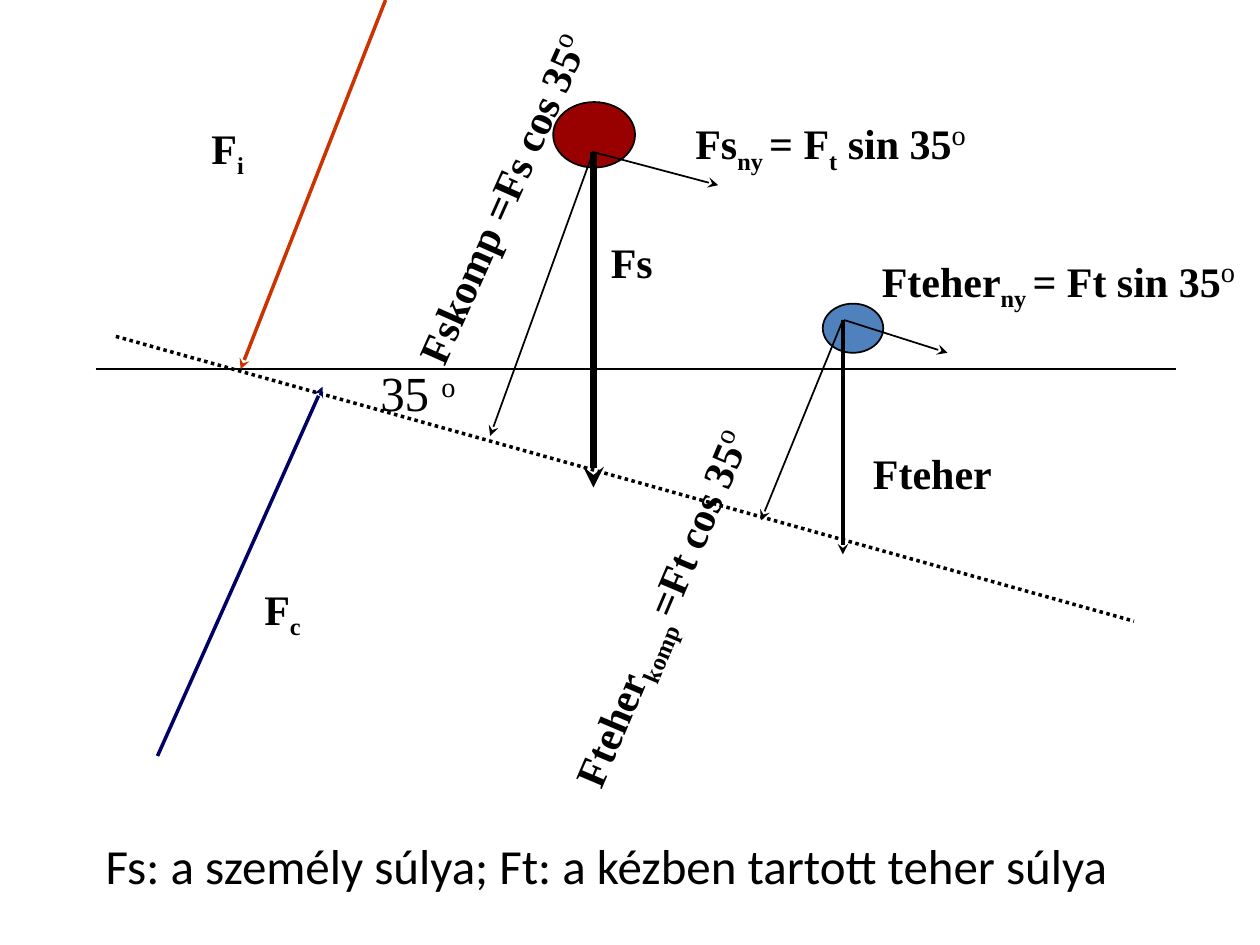
from lxml.etree import SubElement
from pptx import Presentation
from pptx.dml.color import RGBColor
from pptx.enum.dml import MSO_LINE
from pptx.enum.shapes import MSO_CONNECTOR, MSO_SHAPE
from pptx.oxml.ns import qn
from pptx.util import Inches, Pt

BLACK = "000000"

# start, tip, colour, width in points, ending
LEVEL = ((0.76, 2.93), (9.33, 2.93), BLACK, 1, "plain")
PERSON_WEIGHT = ((4.71, 1.21), (4.71, 3.87), BLACK, 4, "arrow")
LOAD_WEIGHT = ((6.69, 2.54), (6.69, 4.4), BLACK, 2, "arrow")
SPINE_AND_FORCES = [
    ((0.92, 2.67), (9, 4.93), BLACK, 2, "dotted"),
    ((3.06, 0), (1.91, 2.93), "CC3300", 2, "arrow"),
    ((4.71, 1.2), (3.89, 3.46), BLACK, 1, "arrow"),
    ((6.69, 2.54), (6.04, 4.13), BLACK, 1, "arrow"),
    ((4.72, 1.21), (5.7, 1.47), BLACK, 1, "arrow"),
    ((6.7, 2.54), (7.52, 2.8), BLACK, 1, "arrow"),
    ((1.25, 6), (2.56, 3.07), "000066", 2, "arrow"),
]
PERSON = ((4.39, 0.81, 0.65, 0.52), "990000")
LOAD = ((6.53, 2.41, 0.48, 0.39), "4F81BD")

# size, bold, baseline in thousandths of a percent
STYLES = {
    "main": (24, True, None),
    "sub": (24, True, -25000),
    "degree": (28, False, 30000),
    "angle": (28, False, None),
}
DEGREE = ("o", "degree")

# left, top, width, height, rotation, runs
LABELS = [
    (4.75, 1.83, 1, 0.51, 0, [("Fs", "main")]),
    (6.83, 3.5, 1.5, 0.51, 0, [("Fteher", "main")]),
    (1.58, 0.92, 0.75, 0.5, 0, [("F", "main"), ("i", "sub")]),
    (2, 4.58, 1, 0.5, 0, [("F", "main"), ("c", "sub")]),
    (2.92, 2.83, 1, 0.57, 0, [("35 ", "angle"), DEGREE]),
    (2.33, 1.15, 3.34, 0.51, 294, [("Fskomp =Fs cos 35", "main"), DEGREE]),
    (3.39, 4.26, 3.86, 0.51, 293,
     [("Fteher", "main"), ("komp ", "sub"), ("=Ft cos 35", "main"), DEGREE]),
    (5.42, 0.83, 2.92, 0.51, 0,
     [("Fs", "main"), ("ny ", "sub"), ("= F", "main"), ("t", "sub"),
      (" sin 35", "main"), DEGREE]),
    (6.9, 1.92, 3.35, 0.51, 0,
     [("Fteher", "main"), ("ny ", "sub"), ("= Ft sin 35", "main"), DEGREE]),
]
CAPTION_BOX = (0.74, 6.58, 8.24, 0.57)
CAPTION = "Fs: a személy súlya; Ft: a kézben tartott teher súlya"


def rgb(color):
    return RGBColor.from_string(color)


def add_line(shapes, start, tip, color, width, ending):
    line = shapes.add_connector(MSO_CONNECTOR.STRAIGHT, *map(Inches, start + tip))
    line.line.color.rgb = rgb(color)
    line.line.width = Pt(width)
    if ending == "dotted":
        line.line.dash_style = MSO_LINE.ROUND_DOT
    if ending == "arrow":
        SubElement(line.line._get_or_add_ln(), qn("a:tailEnd"), type="stealth")
    SubElement(line._element.spPr, qn("a:effectLst"))


def add_ball(shapes, box, color):
    ball = shapes.add_shape(MSO_SHAPE.OVAL, *map(Inches, box))
    ball.shadow.inherit = False
    ball.fill.solid()
    ball.fill.fore_color.rgb = rgb(color)
    ball.line.color.rgb = rgb(BLACK)
    ball.line.width = Pt(1)


def add_text(shapes, box, wrap):
    """Add an empty text box and return it with its first paragraph."""
    sp = shapes.add_textbox(*map(Inches, box))
    sp.text_frame.word_wrap = wrap
    return sp, sp.text_frame.paragraphs[0]


def add_run(p, text, font, size, bold=False, baseline=None):
    r = p.add_run()
    r.text = text
    for name, value in {"name": font, "size": Pt(size), "bold": bold}.items():
        setattr(r.font, name, value)
    r.font.color.rgb = rgb(BLACK)
    if baseline:
        r._r.get_or_add_rPr().set("baseline", str(baseline))


def main():
    prs = Presentation()
    prs.slide_width, prs.slide_height = Inches(10), Inches(7.5)
    s = prs.slides.add_slide(prs.slide_layouts[6])

    diagram = s.shapes.add_group_shape().shapes
    add_line(diagram, *LEVEL)
    for ball, weight in ((PERSON, PERSON_WEIGHT), (LOAD, LOAD_WEIGHT)):
        add_ball(diagram, *ball)
        add_line(diagram, *weight)
    for line in SPINE_AND_FORCES:
        add_line(diagram, *line)

    for *box, rotation, runs in LABELS:
        sp, p = add_text(s.shapes, box, True)
        sp.rotation = rotation
        for text, style in runs:
            add_run(p, text, "Times New Roman", *STYLES[style])

    _, p = add_text(s.shapes, CAPTION_BOX, False)
    add_run(p, CAPTION, "Calibri", 28)
    prs.save("out.pptx")


if __name__ == "__main__":
    main()
